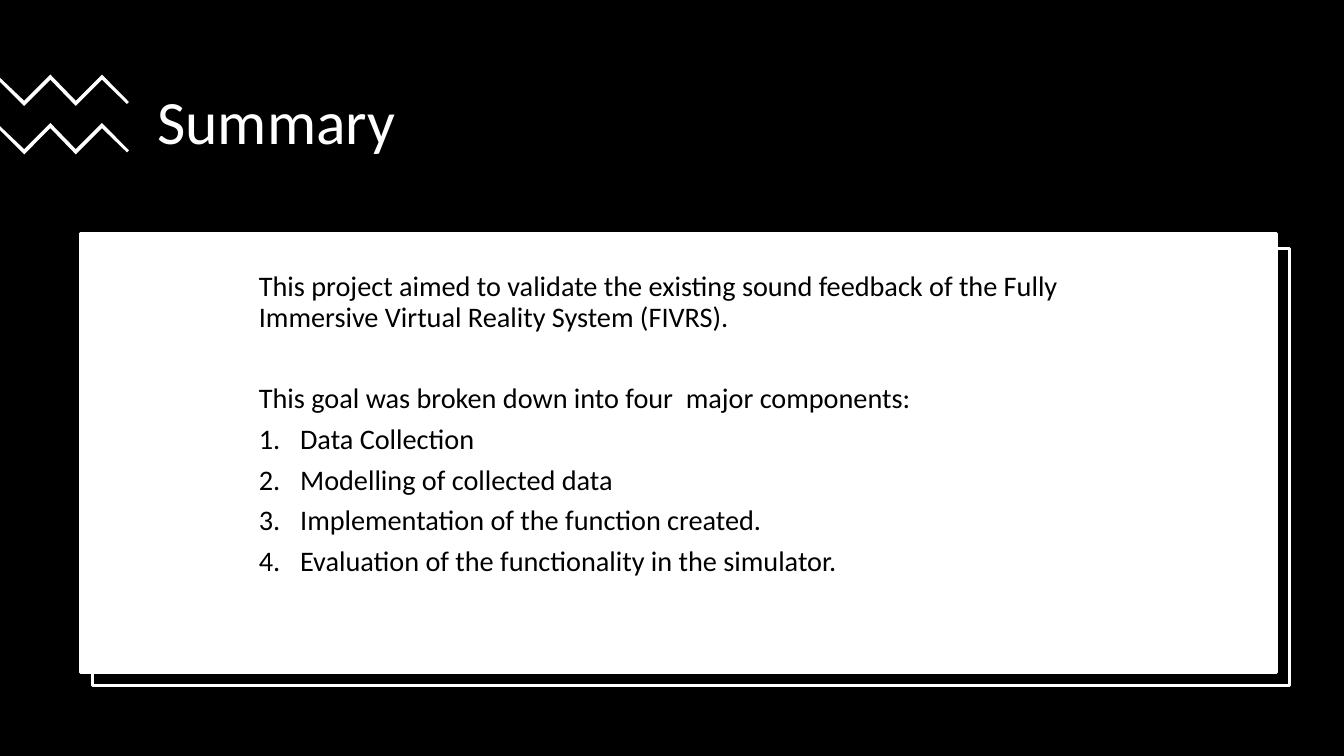
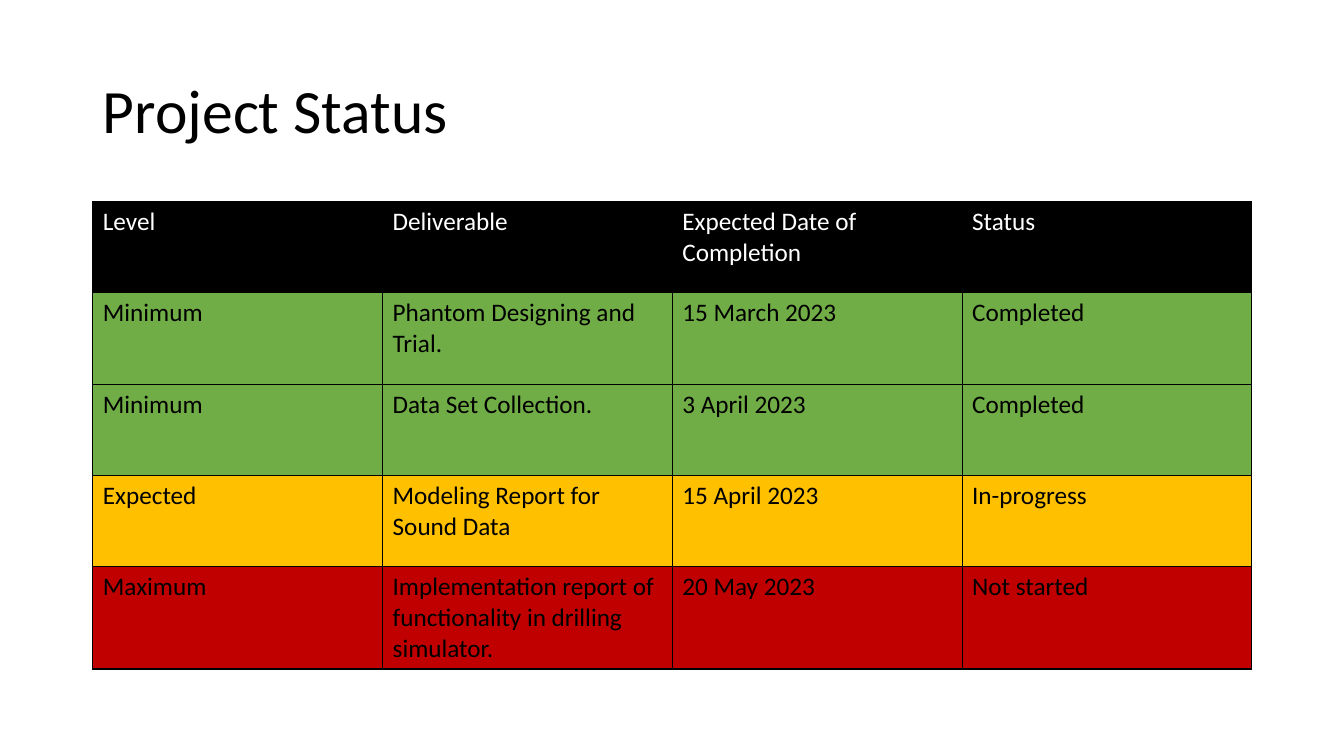
from lxml.etree import SubElement
from pptx import Presentation
from pptx.dml.color import RGBColor
from pptx.enum.shapes import MSO_SHAPE
from pptx.enum.text import MSO_ANCHOR, MSO_AUTO_SIZE, PP_ALIGN
from pptx.oxml import parse_xml
from pptx.oxml.ns import qn
from pptx.util import Cm, Pt

RECT = MSO_SHAPE.RECTANGLE
MIDDLE = MSO_ANCHOR.MIDDLE
TOP = MSO_ANCHOR.TOP
LEFT = PP_ALIGN.LEFT
NO_FIT = MSO_AUTO_SIZE.NONE

FONT = "Calibri"
COLORS = {
    "black": "000000",
    "white": "FFFFFF",
    "green": "70AD47",
    "amber": "FFC000",
    "red": "C00000",
}
WIDE, HIGH = 33.87, 19.05
LEVELS = {"Level": "black", "Minimum": "green", "Expected": "amber", "Maximum": "red"}

INTRO = [
    "This project aimed to validate the existing sound feedback of the Fully "
    "Immersive Virtual Reality System (FIVRS).",
    "This goal was broken down into four  major components:",
]
STEPS = [
    "Data Collection",
    "Modelling of collected data",
    "Implementation of the function created.",
    "Evaluation of the functionality in the simulator.",
]
STATUS = [
    ("Level", "Deliverable", "Expected Date of Completion", "Status"),
    ("Minimum", "Phantom Designing and Trial.", "15 March 2023", "Completed"),
    ("Minimum", "Data Set Collection.", "3 April 2023", "Completed"),
    ("Expected", "Modeling Report for Sound Data", "15 April 2023", "In-progress"),
    ("Maximum", "Implementation report of functionality in drilling simulator.",
     "20 May 2023", "Not started"),
]


def rgb(name):
    return RGBColor.from_string(COLORS[name])


def style(para, size, color):
    para.alignment = LEFT
    for run in para.runs:
        font = run.font
        font.name, font.size, font.bold = FONT, Pt(size), False
        font.color.rgb = rgb(color)


def place(shape, box):
    shape.left, shape.top, shape.width, shape.height = map(Cm, box)


def paint(shape, fill, line=None):
    shape.shadow.inherit = False
    shape.fill.solid()
    shape.fill.fore_color.rgb = rgb(fill)
    if line:
        shape.line.color.rgb = rgb(line)
        shape.line.width = Pt(2.25)
    else:
        shape.line.fill.background()


def add_rect(slide, box, fill, line=None):
    paint(slide.shapes.add_shape(RECT, *map(Cm, box)), fill, line)


def raise_up(slide, shape):
    """Bring a placeholder in front of what has been drawn so far."""
    slide.shapes._spTree.append(shape._element)


def add_title(slide, box, text, color):
    title = slide.shapes.title
    raise_up(slide, title)
    place(title, box)
    frame = title.text_frame
    frame.text = text
    frame.auto_size = NO_FIT
    frame.vertical_anchor = MIDDLE
    para = frame.paragraphs[0]
    para.line_spacing = 0.9
    style(para, 44, color)


def add_zigzag(slide, left, top):
    """Draw a white band whose lower edge repeats the upper one."""
    thick = 0.13
    peaks = [(0.61, 0.66), (1.27, 0), (1.91, 0.66), (2.57, 0)]
    upper = [(0, 0.08), *peaks, (3.25, 0.69)]
    lower = [(0, 0.18), *((x, y + thick) for x, y in peaks), (3.2, 0.74)]
    first, *rest = [(Cm(left + x), Cm(top + y)) for x, y in upper + lower[::-1]]
    form = slide.shapes.build_freeform(*first)
    form.add_line_segments(rest, close=True)
    paint(form.convert_to_shape(), "white")


def add_panel(slide, box):
    left, top, width, height = box
    add_rect(slide, (left + 0.31, top + 0.38, width, height - 0.05), "black", "white")
    add_rect(slide, box, "white", "white")


def add_body(slide, box):
    body = slide.placeholders[1]
    raise_up(slide, body)
    place(body, box)
    frame = body.text_frame
    frame.text = "\n".join(INTRO + STEPS)
    frame.auto_size = NO_FIT
    frame.vertical_anchor = TOP
    for para in frame.paragraphs:
        style(para, 20.2, "black")
        para.line_spacing = 0.9
        para.space_before = Pt(36.5 if para.text == INTRO[1] else 7.2)
        props = para._p.get_or_add_pPr()
        listed = para.text in STEPS
        indent = Cm(1.04) if listed else 0
        props.set("marL", str(indent))
        props.set("indent", str(-indent))
        if listed:
            SubElement(props, qn("a:buFont"), typeface="+mj-lt")
            SubElement(props, qn("a:buAutoNum"), type="arabicPeriod")
        else:
            SubElement(props, qn("a:buNone"))


def add_edges(cell):
    space = "http://schemas.openxmlformats.org/drawingml/2006/main"
    props = cell._tc.get_or_add_tcPr()
    for side in "LRTB":
        props.append(parse_xml(
            f'<a:ln{side} xmlns:a="{space}" w="{Pt(1)}"><a:solidFill>'
            f'<a:srgbClr val="{COLORS["black"]}"/></a:solidFill></a:ln{side}>'))


def add_status(slide, box):
    rows, cols = len(STATUS), len(STATUS[0])
    table = slide.shapes.add_table(rows, cols, *map(Cm, box)).table
    table.first_row = table.horz_banding = False
    for r, texts in enumerate(STATUS):
        for c, text in enumerate(texts):
            cell = table.cell(r, c)
            add_edges(cell)
            cell.fill.solid()
            cell.fill.fore_color.rgb = rgb(LEVELS[texts[0]])
            cell.text = text
            style(cell.text_frame.paragraphs[0], 18, "black" if r else "white")


def add_summary(deck):
    slide = deck.slides.add_slide(deck.slide_layouts[1])
    add_rect(slide, (0, 0, WIDE, HIGH), "black")
    add_title(slide, (3.71, 1.57, 27.08, 3.12), "Summary", "white")
    for top in (1.88, 3.1):
        add_zigzag(slide, 0, top)
    add_panel(slide, (2.03, 5.89, 30.15, 11.05))
    add_body(slide, (6.27, 6.73, 21.39, 9.37))


def add_project(deck):
    slide = deck.slides.add_slide(deck.slide_layouts[5])
    add_title(slide, (2.34, 1.02, 29.21, 3.68), "Project Status", "black")
    add_status(slide, (2.34, 5.08, 29.21, 11.5))


def main():
    deck = Presentation()
    deck.slide_width, deck.slide_height = Cm(WIDE), Cm(HIGH)
    add_summary(deck)
    add_project(deck)
    deck.save("out.pptx")


if __name__ == "__main__":
    main()
